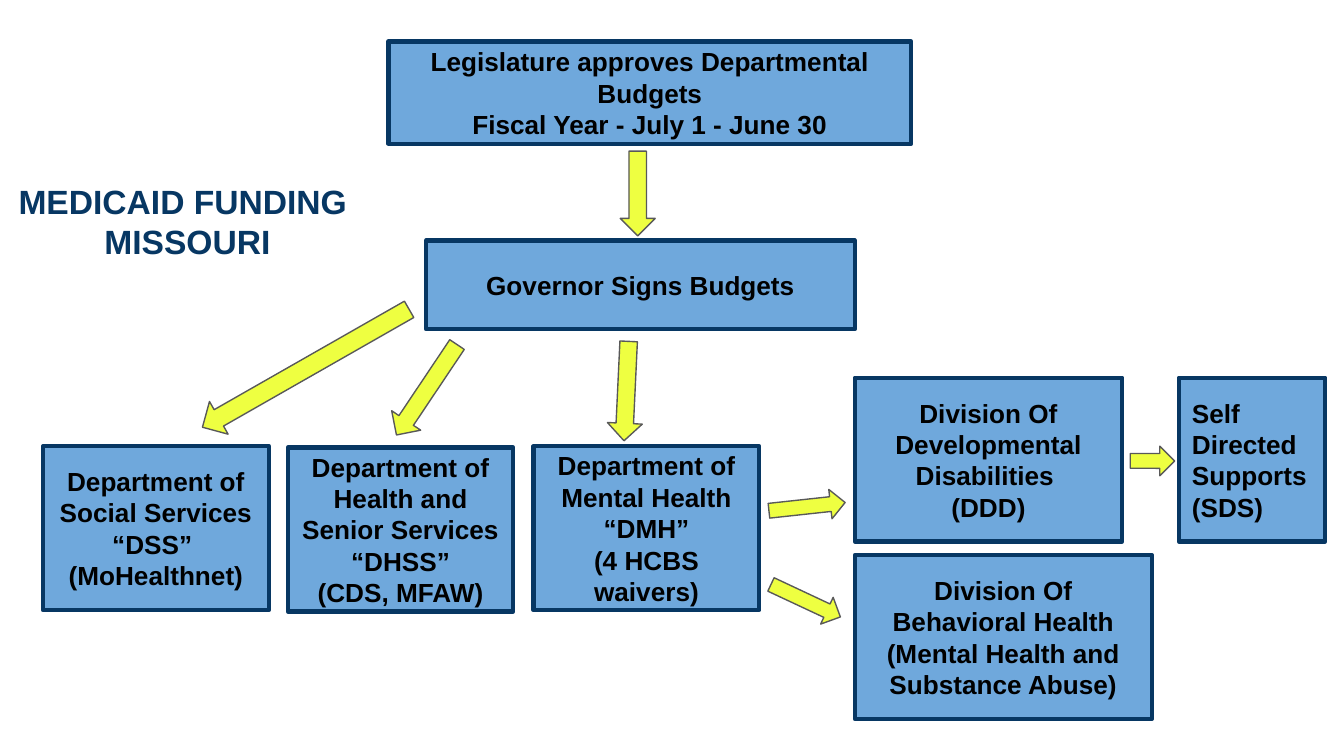
from dataclasses import dataclass

from pptx import Presentation
from pptx.dml.color import RGBColor
from pptx.enum.shapes import MSO_SHAPE
from pptx.enum.text import MSO_ANCHOR, MSO_AUTO_SIZE, PP_ALIGN
from pptx.shapes.autoshape import Shape
from pptx.slide import Slide
from pptx.util import Inches, Pt

RECTANGLE = MSO_SHAPE.RECTANGLE
RIGHT_ARROW = MSO_SHAPE.RIGHT_ARROW
MIDDLE = MSO_ANCHOR.MIDDLE
NO_AUTOFIT = MSO_AUTO_SIZE.NONE
CENTER = PP_ALIGN.CENTER
LEFT = PP_ALIGN.LEFT
TITLE_ONLY_LAYOUT = 5

COLORS = {
    "navy": "073763",
    "box": "6FA8DC",
    "text": "000000",
    "arrow": "EEFF41",
    "arrow_line": "595959",
}

SLIDE_WIDTH = 10
SLIDE_HEIGHT = SLIDE_WIDTH * 9 / 16
DEPARTMENT_WIDTH = 1.68
ROW_HEIGHT = 1.22
DIVISION_LEFT = 6.36
DIVISION_TOP = 2.81


@dataclass
class Box:
    left: float
    top: float
    width: float
    height: float
    lines: tuple[str, ...]
    alignment: PP_ALIGN = CENTER


@dataclass
class Arrow:
    """Unrotated frame of an arrow, turned clockwise by rotation degrees."""
    left: float
    top: float
    width: float
    height: float
    rotation: float = 0


BOXES = [
    Box(2.89, 0.31, 3.89, 0.76,
        ("Legislature approves Departmental Budgets",
         "Fiscal Year - July 1 - June 30")),
    Box(3.17, 1.79, 3.19, 0.66, ("Governor Signs Budgets",)),
    Box(0.32, 3.32, DEPARTMENT_WIDTH, ROW_HEIGHT,
        ("Department of Social Services", "“DSS” ", "(MoHealthnet)")),
    Box(2.14, 3.33, DEPARTMENT_WIDTH, ROW_HEIGHT,
        ("Department of Health and Senior Services", "“DHSS”", "(CDS, MFAW)")),
    Box(3.97, 3.32, DEPARTMENT_WIDTH, ROW_HEIGHT,
        ("Department of Mental Health", "“DMH”", "(4 HCBS waivers)")),
    Box(DIVISION_LEFT, DIVISION_TOP, 1.99, ROW_HEIGHT,
        ("Division Of Developmental Disabilities ", "(DDD)")),
    Box(DIVISION_LEFT, 4.13, 2.21, ROW_HEIGHT,
        ("Division Of Behavioral Health", "(Mental Health and Substance Abuse)")),
    Box(8.77, DIVISION_TOP, 1.09, ROW_HEIGHT,
        ("Self Directed Supports (SDS)",), LEFT),
]

ARROWS = [
    Arrow(4.43, 1.31, 0.63, 0.26, 90),
    Arrow(1.39, 2.6, 1.77, 0.28, 150.3),
    Arrow(2.77, 2.77, 0.81, 0.26, 123.8),
    Arrow(4.29, 2.78, 0.74, 0.26, 92.7),
    Arrow(5.72, 3.66, 0.57, 0.22, 353.8),
    Arrow(5.71, 4.36, 0.57, 0.22, 25.1),
    Arrow(8.41, 3.32, 0.33, 0.22, 0.1),
]


def color(name: str) -> RGBColor:
    return RGBColor.from_string(COLORS[name])


def write_lines(shape: Shape, lines: tuple[str, ...], size: int,
                color_name: str, alignment: PP_ALIGN) -> None:
    """Fill the shape with one bold paragraph per line."""
    frame = shape.text_frame
    frame.word_wrap = True
    frame.auto_size = NO_AUTOFIT
    frame.vertical_anchor = MIDDLE
    frame.margin_left = frame.margin_right = Inches(0.1)
    frame.margin_top = frame.margin_bottom = Inches(0.1)
    for index, line in enumerate(lines):
        paragraph = frame.add_paragraph() if index else frame.paragraphs[0]
        paragraph.alignment = alignment
        run = paragraph.add_run()
        run.text = line
        run.font.name = "Arial"
        run.font.size = Pt(size)
        run.font.bold = True
        run.font.color.rgb = color(color_name)


def add_filled_shape(slide: Slide, kind: MSO_SHAPE, frame: Box | Arrow,
                     fill: str, line: str, line_width: float) -> Shape:
    shape = slide.shapes.add_shape(
        kind, Inches(frame.left), Inches(frame.top),
        Inches(frame.width), Inches(frame.height))
    shape.shadow.inherit = False
    shape.fill.solid()
    shape.fill.fore_color.rgb = color(fill)
    shape.line.color.rgb = color(line)
    shape.line.width = Pt(line_width)
    return shape


def add_box(slide: Slide, box: Box) -> None:
    shape = add_filled_shape(slide, RECTANGLE, box, "box", "navy", 2.25)
    write_lines(shape, box.lines, 14, "text", box.alignment)


def add_arrow(slide: Slide, arrow: Arrow) -> None:
    shape = add_filled_shape(slide, RIGHT_ARROW, arrow, "arrow", "arrow_line", 0.75)
    shape.rotation = arrow.rotation


def add_title(slide: Slide) -> None:
    title = slide.shapes.title
    title.left, title.top = Inches(0), Inches(0.27)
    title.width, title.height = Inches(2.79), Inches(2.75)
    write_lines(title, ("MEDICAID FUNDING ", "MISSOURI"), 18, "navy", CENTER)


def main() -> None:
    presentation = Presentation()
    presentation.slide_width = Inches(SLIDE_WIDTH)
    presentation.slide_height = Inches(SLIDE_HEIGHT)
    layout = presentation.slide_layouts[TITLE_ONLY_LAYOUT]
    slide = presentation.slides.add_slide(layout)
    add_title(slide)
    for box in BOXES:
        add_box(slide, box)
    for arrow in ARROWS:
        add_arrow(slide, arrow)
    presentation.save("out.pptx")


if __name__ == "__main__":
    main()
